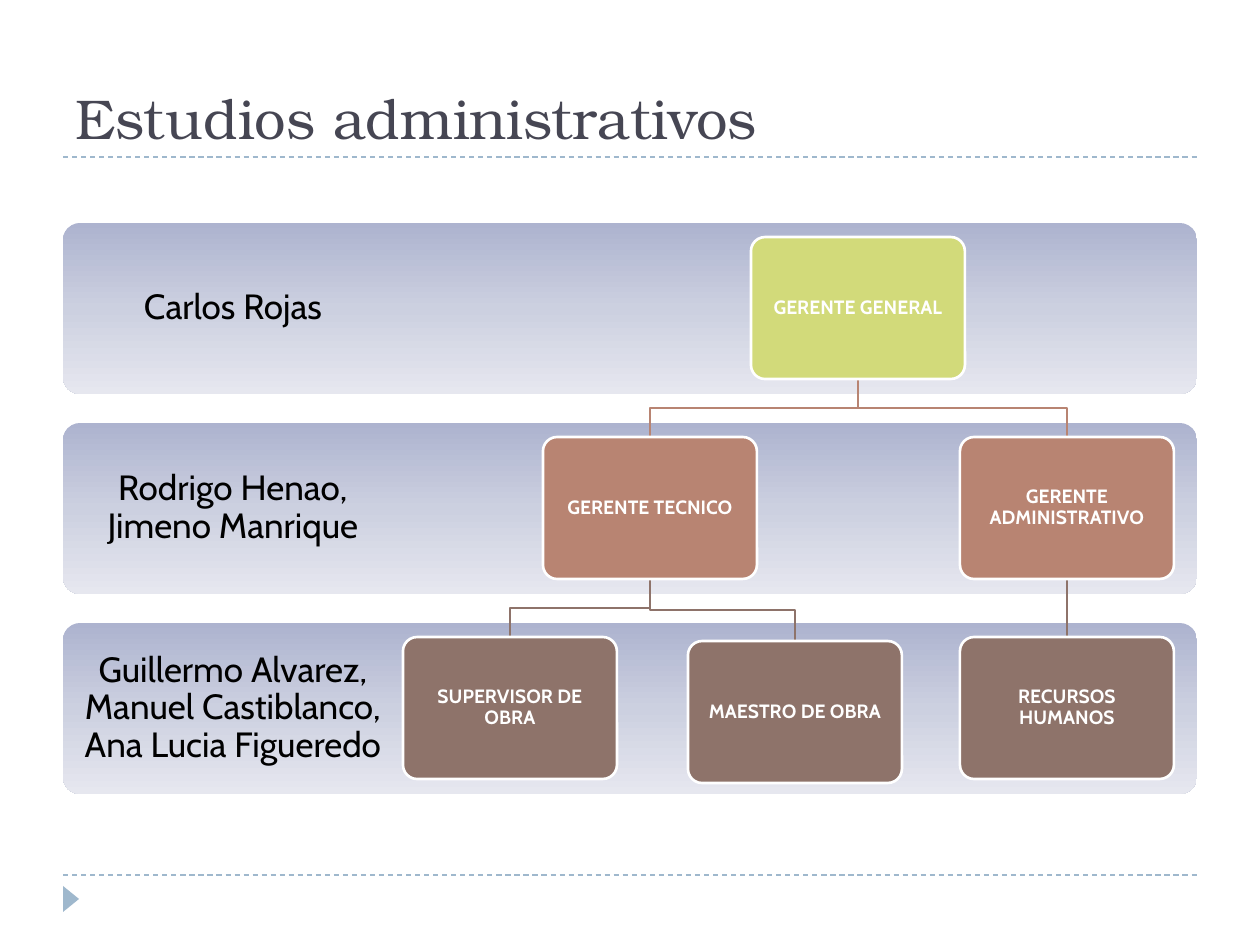
from copy import deepcopy

from lxml import etree
from pptx import Presentation
from pptx import util as u
from pptx.dml.color import RGBColor
from pptx.enum import dml, shapes, text
from pptx.oxml.ns import qn

SCALE = 914400 / 126
COLORS = {
    "title": "464653", "rule": "9FB8CD", "text": "000000", "white": "FFFFFF",
    "top": "ADB3CF", "mid": "CCD0E0", "low": "E6E7EF",
    "lime": "D2DA7A", "clay": "B88472", "brown": "8E736A",
}
LEFT, WIDTH = 63, 1134
ROW, PITCH, BAND = 223, 200, 171
BOX_W, BOX_H, PAD = 214, 142, 14
NAMES = [
    "Carlos Rojas",
    "Rodrigo Henao, Jimeno Manrique",
    "Guillermo Alvarez, Manuel Castiblanco, Ana Lucia Figueredo",
]
ROLES = {
    "general": ("GERENTE GENERAL", 751, 0, 0, "lime"),
    "tech": ("GERENTE TECNICO", 543, 1, 0, "clay"),
    "admin": ("GERENTE ADMINISTRATIVO", 960, 1, 0, "clay"),
    "super": ("SUPERVISOR DE OBRA", 403, 2, 0, "brown"),
    "master": ("MAESTRO DE OBRA", 688, 2, 4, "brown"),
    "staff": ("RECURSOS HUMANOS", 960, 2, 0, "brown"),
}
LINKS = [
    ("general", "tech"), ("general", "admin"),
    ("tech", "super"), ("tech", "master"), ("admin", "staff"),
]


def px(*vals):
    return [u.Emu(round(v * SCALE)) for v in vals]


def rgb(name):
    return RGBColor.from_string(COLORS[name])


def write(frame, words, font, size, color, bold=False):
    frame.text = words
    frame.word_wrap = True
    for run in frame.paragraphs[0].runs:
        run.font.name = font
        run.font.size = u.Pt(size)
        run.font.bold = bold
        run.font.color.rgb = rgb(color)


def center(frame, inset):
    frame.vertical_anchor = text.MSO_ANCHOR.MIDDLE
    frame.margin_left = frame.margin_right = px(inset)[0]
    frame.margin_top = frame.margin_bottom = px(inset)[0]
    para = frame.paragraphs[0]
    para.alignment = text.PP_ALIGN.CENTER
    para.line_spacing = 0.9


def stroke(line, color, width):
    line.color.rgb = rgb(color)
    line.width = u.Pt(width)


def add_title(slide, words):
    title = slide.shapes.title
    title.left, title.top, title.width, title.height = px(LEFT, 21, WIDTH, 136)
    write(title.text_frame, words, "TeX Gyre Bonum", 32, "title")
    title.text_frame.vertical_anchor = text.MSO_ANCHOR.BOTTOM
    title.text_frame.paragraphs[0].alignment = text.PP_ALIGN.LEFT


def add_line(slide, ends, color, width):
    line = slide.shapes.add_connector(shapes.MSO_CONNECTOR.STRAIGHT, *px(*ends))
    stroke(line.line, color, width)
    etree.SubElement(line._element.spPr, qn("a:effectLst"))
    return line


def add_rule(slide, y):
    rule = add_line(slide, (LEFT, y, LEFT + WIDTH, y), "rule", 0.75)
    rule.line.dash_style = dml.MSO_LINE.DASH


def add_mark(slide):
    mark = slide.shapes.add_shape(
        shapes.MSO_SHAPE.ISOSCELES_TRIANGLE, *px(58, 891, 26, 16))
    mark.rotation = 90
    mark.shadow.inherit = False
    mark.fill.solid()
    mark.fill.fore_color.rgb = rgb("rule")
    mark.line.fill.background()


def add_round(slide, *rect):
    shape = slide.shapes.add_shape(shapes.MSO_SHAPE.ROUNDED_RECTANGLE, *px(*rect))
    shape.adjustments[0] = 0.1
    shape.shadow.inherit = False
    return shape


def shade(shape):
    shape.fill.gradient()
    shape.fill.gradient_angle = 270
    stops = shape._element.spPr.find(".//" + qn("a:gsLst"))
    stops.insert(1, deepcopy(stops[0]))
    for stop, pos, name in zip(shape.fill.gradient_stops, (0, 0.5, 1), ("top", "mid", "low")):
        stop.position = pos
        stop.color.rgb = rgb(name)


def add_band(slide, row, names):
    top = ROW + row * PITCH
    band = add_round(slide, LEFT, top, WIDTH, BAND)
    shade(band)
    band.line.fill.background()
    label = slide.shapes.add_textbox(*px(LEFT, top, 340, BAND))
    write(label.text_frame, names, "Cabin", 20, "text")
    center(label.text_frame, 20)


def spot(role):
    _, left, row, drop, _ = ROLES[role]
    return left, ROW + row * PITCH + PAD + drop


def add_link(slide, boss, aide):
    (x1, y1), (x2, y2) = spot(boss), spot(aide)
    x1, x2, y1 = x1 + BOX_W // 2, x2 + BOX_W // 2, y1 + BOX_H
    color = ROLES[aide][-1]
    if x1 == x2:
        add_line(slide, (x1, y1, x2, y2), color, 1.5)
        return
    mid = (y1 + y2) // 2
    pen = slide.shapes.build_freeform(x1, y1, scale=SCALE)
    pen.add_line_segments([(x1, mid), (x2, mid), (x2, y2)], close=False)
    link = pen.convert_to_shape()
    link.shadow.inherit = False
    link.fill.background()
    stroke(link.line, color, 1.5)


def add_box(slide, role):
    words, *_, color = ROLES[role]
    box = add_round(slide, *spot(role), BOX_W, BOX_H)
    box.fill.solid()
    box.fill.fore_color.rgb = rgb(color)
    stroke(box.line, "white", 1.5)
    write(box.text_frame, words, "Cabin", 11, "white", True)
    center(box.text_frame, 6)


def main():
    deck = Presentation()
    deck.slide_width, deck.slide_height = px(1260, 945)
    slide = deck.slides.add_slide(deck.slide_layouts[5])
    add_title(slide, "Estudios administrativos")
    for y in (157, 875):
        add_rule(slide, y)
    add_mark(slide)
    for row, names in enumerate(NAMES):
        add_band(slide, row, names)
    for boss, aide in LINKS:
        add_link(slide, boss, aide)
    for role in ROLES:
        add_box(slide, role)
    deck.save("out.pptx")


if __name__ == "__main__":
    main()
